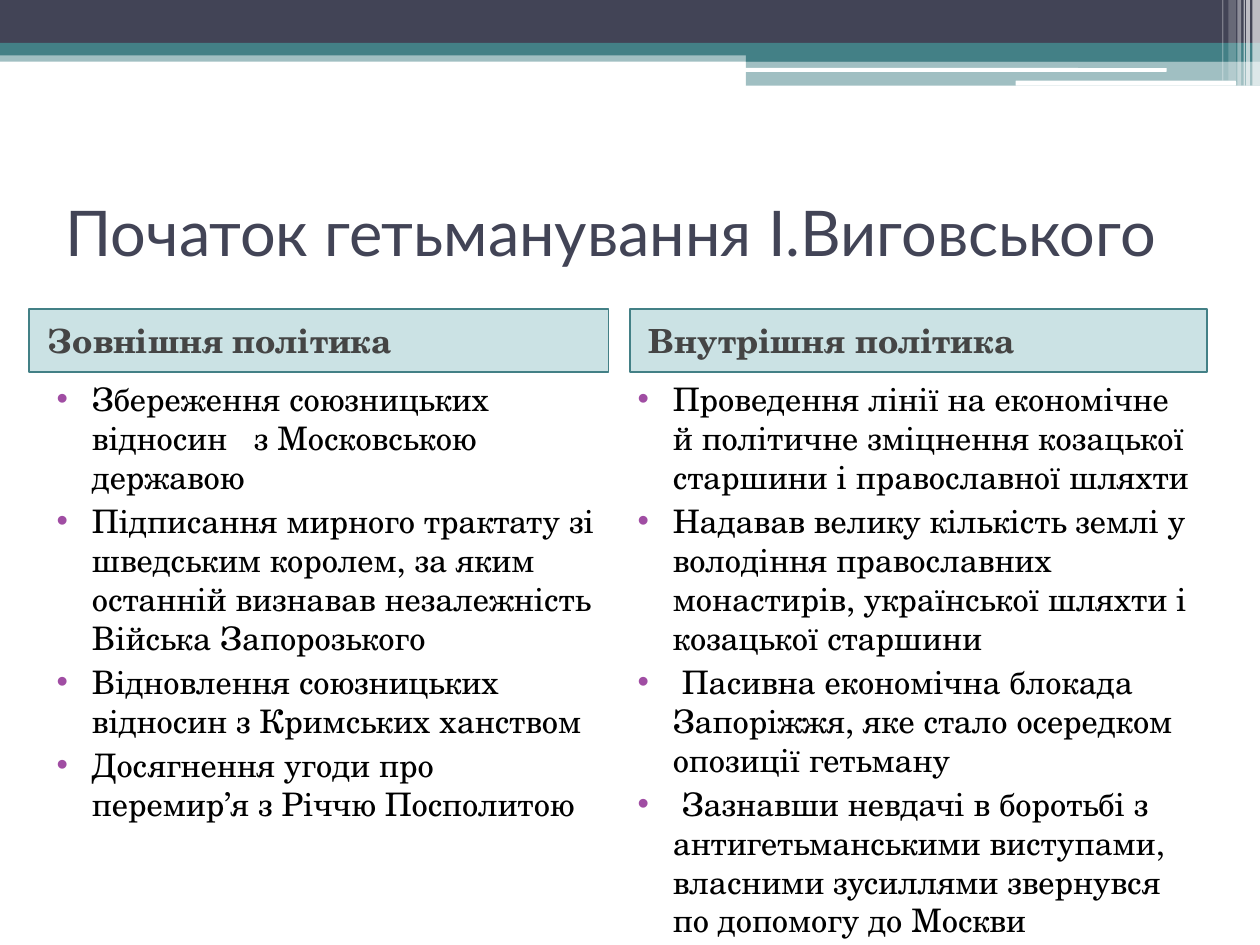
"""Builds a two-column comparison slide on Vyhovsky's policies."""
from lxml.etree import SubElement
from pptx import Presentation
from pptx.dml.color import RGBColor
from pptx.enum.shapes import MSO_SHAPE as SHAPE
from pptx.enum.text import MSO_ANCHOR as ANCHOR, MSO_AUTO_SIZE as FIT, PP_ALIGN as ALIGN
from pptx.oxml.ns import qn
from pptx.util import Inches, Pt

TITLE = "Початок гетьманування І.Виговського"
COLUMNS = [
    ("Зовнішня політика", [
        "Збереження союзницьких відносин   з Московською державою",
        "Підписання мирного трактату зі шведським королем, за яким останній "
        "визнавав незалежність Війська Запорозького",
        "Відновлення союзницьких відносин з Кримських ханством",
        "Досягнення угоди про перемир’я з Річчю Посполитою",
    ]),
    ("Внутрішня політика", [
        "Проведення лінії на економічне й політичне зміцнення козацької "
        "старшини і православної шляхти",
        "Надавав велику кількість землі у володіння православних монастирів, "
        "української шляхти і козацької старшини",
        " Пасивна економічна блокада Запоріжжя, яке стало осередком опозиції гетьману",
        " Зазнавши невдачі в боротьбі з антигетьманськими виступами, власними "
        "зусиллями звернувся по допомогу до Москви",
    ]),
]
W, H = 10, 7.5
NAVY, TEAL, WHITE = "424456", "438086", "FFFFFF"
BANDS = [
    (0, 0.4, W, 0.09, TEAL, 50),
    (0, 0, W, 0.34, NAVY, 100),
    (0, 0.34, W, 0.1, TEAL, 100),
    (5.92, 0.39, 4.08, 0.1, TEAL, 100),
    (5.92, 0.48, 4.08, 0.2, TEAL, 50),
]
PILLS = [(5.91, 0.54, 3.35, 0.03), (8.06, 0.64, 1.75, 0.04)]
STRIPES = [(9.94, 0.06, 0.68, 65), (9.89, 0.03, 0.68, 65), (9.87, 0.01, 0.68, 60),
           (9.82, 0.03, 0.68, 40), (9.75, 0.06, 0.64, 20), (9.7, 0.01, 0.64, 30)]
HEAD_Y, HEAD_H, LIST_Y, LIST_H = 2.45, 0.5, 2.96, 4.25
HEAD_X = [(0.23, 4.6), (5, 4.58)]
LIST_X = [(0.23, 4.6), (4.84, 4.74)]
TITLE_FONT = {"name": "Lato", "size": Pt(36), "color": NAVY}
HEAD_FONT = {"name": "TeX Gyre Schola", "size": Pt(19), "bold": True, "color": "454545"}
LIST_FONT = {"name": "TeX Gyre Schola", "size": Pt(18.5), "color": "000000"}


def rgb(value):
    return RGBColor.from_string(value)


def paint(sp, color, alpha=100):
    sp.fill.solid()
    sp.fill.fore_color.rgb = rgb(color)
    if alpha < 100:
        clr = sp.element.spPr.find(qn("a:solidFill"))[0]
        SubElement(clr, qn("a:alpha"), val=str(alpha * 1000))


def add_bar(s, kind, box, color, alpha=100):
    sp = s.shapes.add_shape(kind, *map(Inches, box))
    sp.shadow.inherit = False
    sp.line.fill.background()
    paint(sp, color, alpha)


def fill_text(sp, box, texts, font, anchor, margin=0, indent=0, before=0, bullet=None):
    sp.left, sp.top, sp.width, sp.height = map(Inches, box)
    sp.element.getparent().append(sp.element)
    tf = sp.text_frame
    for key, value in {"word_wrap": True, "auto_size": FIT.NONE,
                       "vertical_anchor": anchor}.items():
        setattr(tf, key, value)
    for i, text in enumerate(texts):
        p = tf.add_paragraph() if i else tf.paragraphs[0]
        p.alignment, p.space_before = ALIGN.LEFT, Pt(before)
        r = p.add_run()
        r.text = text
        for key, value in font.items():
            if key == "color":
                r.font.color.rgb = rgb(value)
            else:
                setattr(r.font, key, value)
        pPr = p._p.get_or_add_pPr()
        pPr.set("marL", str(Inches(margin)))
        pPr.set("indent", str(Inches(indent)))
        if bullet:
            SubElement(SubElement(pPr, qn("a:buClr")), qn("a:srgbClr"), val=bullet)
            SubElement(pPr, qn("a:buFont"), typeface="Arial")
            SubElement(pPr, qn("a:buChar"), char="•")


def main():
    prs = Presentation()
    prs.slide_width, prs.slide_height = Inches(W), Inches(H)
    s = prs.slides.add_slide(prs.slide_layouts[4])
    title, *bodies = list(s.placeholders)

    for *box, color, alpha in BANDS:
        add_bar(s, SHAPE.RECTANGLE, box, color, alpha)
    for box in PILLS:
        add_bar(s, SHAPE.ROUNDED_RECTANGLE, box, WHITE)
    for x, w, h, alpha in STRIPES:
        add_bar(s, SHAPE.RECTANGLE, (x, 0, w, h), WHITE, alpha)

    fill_text(title, (0.42, 1.25, 9.17, 1.17), [TITLE], TITLE_FONT, ANCHOR.MIDDLE)
    for (head, _), sp, (x, w) in zip(COLUMNS, bodies[::2], HEAD_X):
        fill_text(sp, (x, HEAD_Y, w, HEAD_H), [head], HEAD_FONT, ANCHOR.MIDDLE,
                  margin=0.05, before=3)
        paint(sp, "328E97", 25)
        sp.line.color.rgb, sp.line.width = rgb(TEAL), Pt(1)
    for (_, items), sp, (x, w) in zip(COLUMNS, bodies[1::2], LIST_X):
        fill_text(sp, (x, LIST_Y, w, LIST_H), items, LIST_FONT, ANCHOR.TOP,
                  margin=0.4, indent=-0.28, before=3, bullet="A04DA3")
    prs.save("out.pptx")


if __name__ == "__main__":
    main()
